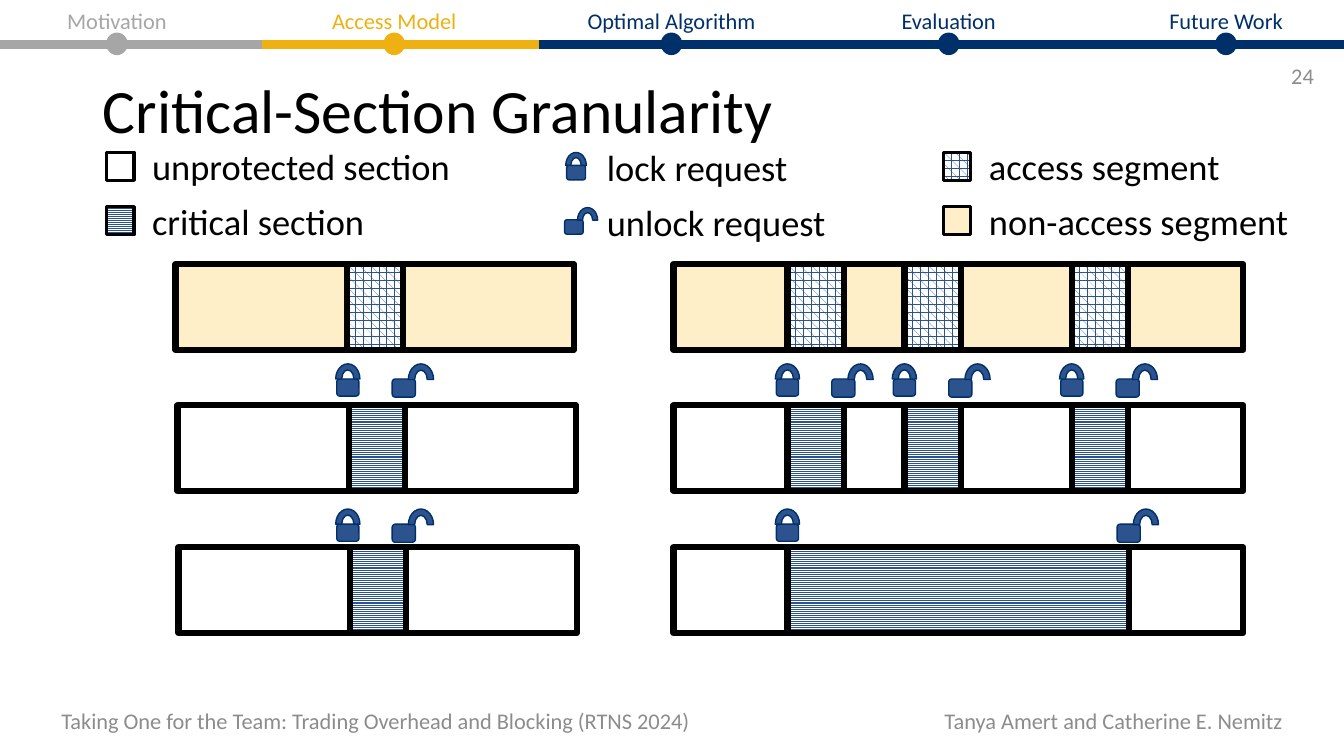
from dataclasses import dataclass

import pptx
import pptx.dml.color
import pptx.enum.dml
import pptx.enum.shapes
import pptx.enum.text
import pptx.oxml.ns
import pptx.util
from lxml import etree
from pptx.util import Inches

SHAPE = pptx.enum.shapes.MSO_SHAPE
PATTERN = pptx.enum.dml.MSO_PATTERN
ALIGN = pptx.enum.text.PP_ALIGN
ANCHOR = pptx.enum.text.MSO_ANCHOR

FONT = "Calibri"
BLACK, WHITE = "000000", "FFFFFF"
NAVY, BLUE, GOLD = "003069", "2D538F", "EEB111"
CREAM, GRAY, FOOTER_GRAY = "FFEFC8", "A6A6A6", "8C8C8C"


@dataclass(frozen=True)
class Box:
    left: float
    top: float
    width: float
    height: float

    def lengths(self) -> tuple:
        return tuple(Inches(v) for v in (self.left, self.top, self.width, self.height))


@dataclass(frozen=True)
class Fill:
    color: str | None = None
    pattern: object = None


@dataclass(frozen=True)
class Stage:
    label: str
    color: str
    label_width: float


@dataclass(frozen=True)
class Padlock:
    body_width: float
    body_height: float
    arc: Box  # relative to the body


@dataclass(frozen=True)
class LegendEntry:
    label: str
    left: float
    top: float
    width: float
    key: Fill | None = None


@dataclass(frozen=True)
class Segment:
    offset: float
    width: float = 0.56


@dataclass(frozen=True)
class Timeline:
    row_lefts: tuple[float, float, float]
    request_left: float
    width: float
    accesses: tuple[Segment, ...]
    coarse_section: Segment


UNPROTECTED = Fill()
CRITICAL = Fill(BLUE, PATTERN.LIGHT_HORIZONTAL)
ACCESS = Fill(BLUE, PATTERN.PLAID)
NON_ACCESS = Fill(CREAM)

LOCK = Padlock(0.22, 0.17, Box(-0.01, -0.15, 0.24, 0.3))
UNLOCK = Padlock(0.23, 0.18, Box(0.16, -0.15, 0.25, 0.31))

STAGES = [
    Stage("Motivation", GRAY, 1.48),
    Stage("Access Model", GOLD, 2.09),
    Stage("Optimal Algorithm", NAVY, 2.13),
    Stage("Evaluation", NAVY, 1.86),
    Stage("Future Work", NAVY, 1.48),
]
FIRST_STAGE, STAGE_STEP, TRACK_Y = 1.16, 2.75, 0.44
TRACK = [(0, 2.6, GRAY), (2.6, 5.35, GOLD), (5.35, 13.33, NAVY)]

LEGEND = [
    LegendEntry("unprotected section", 1.41, 1.38, 3.72, UNPROTECTED),
    LegendEntry("critical section", 1.41, 1.92, 2.89, CRITICAL),
    LegendEntry("lock request", 5.92, 1.39, 2.59),
    LegendEntry("unlock request", 5.92, 1.93, 2.71),
    LegendEntry("access segment", 9.71, 1.38, 2.94, ACCESS),
    LegendEntry("non-access segment", 9.71, 1.92, 3.48, NON_ACCESS),
]

ROW_TOPS = (2.62, 4.02, 5.43)
REQUEST_TOPS = (3.76, 5.2)
BAR_HEIGHT = 0.85
TIMELINES = [
    Timeline((1.74, 1.76, 1.77), 1.75, 3.95, (Segment(1.7),), Segment(1.7)),
    Timeline((6.68, 6.68, 6.68), 6.68, 5.65,
             (Segment(1.13), Segment(2.29), Segment(3.95)), Segment(1.13, 3.39)),
]


def rgb(color: str) -> pptx.dml.color.RGBColor:
    return pptx.dml.color.RGBColor.from_string(color)


def style_text(frame, text: str, size: float, color: str, align) -> None:
    frame.text = text
    frame.word_wrap = True
    paragraph = frame.paragraphs[0]
    paragraph.alignment = align
    font = paragraph.runs[0].font
    font.name, font.size = FONT, pptx.util.Pt(size)
    font.color.rgb = rgb(color)


def add_text(slide, box: Box, text: str, size: float, color: str,
             align=ALIGN.LEFT, anchor=ANCHOR.MIDDLE) -> None:
    frame = slide.shapes.add_textbox(*box.lengths()).text_frame
    frame.vertical_anchor = anchor
    style_text(frame, text, size, color, align)


def draw_shape(slide, kind, box: Box, fill: Fill, line: str, weight: float) -> None:
    shape = slide.shapes.add_shape(kind, *box.lengths())
    shape.shadow.inherit = False
    if fill.pattern is not None:
        shape.fill.patterned()
        shape.fill.pattern = fill.pattern
        shape.fill.fore_color.rgb = rgb(fill.color)
        shape.fill.back_color.rgb = rgb(WHITE)
    elif fill.color:
        shape.fill.solid()
        shape.fill.fore_color.rgb = rgb(fill.color)
    else:
        shape.fill.background()
    shape.line.color.rgb = rgb(line)
    shape.line.width = pptx.util.Pt(weight)


def draw_padlock(slide, padlock: Padlock, left: float, top: float, scale: float = 1) -> None:
    arc = padlock.arc
    body = Box(left, top, padlock.body_width * scale, padlock.body_height * scale)
    shackle = Box(left + arc.left * scale, top + arc.top * scale,
                  arc.width * scale, arc.height * scale)
    draw_shape(slide, SHAPE.ROUNDED_RECTANGLE, body, Fill(BLUE), NAVY, 1)
    draw_shape(slide, SHAPE.BLOCK_ARC, shackle, Fill(BLUE), NAVY, 1)


def draw_progress(slide) -> None:
    for start, end, color in TRACK:
        track = slide.shapes.add_connector(
            pptx.enum.shapes.MSO_CONNECTOR.STRAIGHT,
            Inches(start), Inches(TRACK_Y), Inches(end), Inches(TRACK_Y))
        track.line.color.rgb = rgb(color)
        track.line.width = pptx.util.Pt(6)
        etree.SubElement(track._element.spPr, pptx.oxml.ns.qn("a:effectLst"))
    for index, stage in enumerate(STAGES):
        center = FIRST_STAGE + index * STAGE_STEP
        label = Box(center - stage.label_width / 2, 0.02, stage.label_width, 0.37)
        add_text(slide, label, stage.label, 16, stage.color, ALIGN.CENTER, ANCHOR.TOP)
        draw_shape(slide, SHAPE.OVAL, Box(center - 0.1, 0.33, 0.2, 0.21),
                   Fill(stage.color), stage.color, 1)


def draw_legend(slide) -> None:
    for entry in LEGEND:
        add_text(slide, Box(entry.left, entry.top, entry.width, 0.54), entry.label, 26, BLACK)
        if entry.key:
            key = Box(entry.left - 0.35, entry.top + 0.13, 0.27, 0.28)
            draw_shape(slide, SHAPE.RECTANGLE, key, entry.key, BLACK, 2.25)
    draw_padlock(slide, LOCK, 5.62, 1.64, 0.85)
    draw_padlock(slide, UNLOCK, 5.6, 2.18, 0.8)


def draw_timeline(slide, timeline: Timeline) -> None:
    coarse = (timeline.coarse_section,)
    rows = [(NON_ACCESS, ACCESS, timeline.accesses),
            (UNPROTECTED, CRITICAL, timeline.accesses),
            (UNPROTECTED, CRITICAL, coarse)]
    for left, top, (base, marked, segments) in zip(timeline.row_lefts, ROW_TOPS, rows):
        spans = [(Segment(0, timeline.width), base)] + [(s, marked) for s in segments]
        for span, fill in spans:
            box = Box(left + span.offset, top, span.width, BAR_HEIGHT)
            draw_shape(slide, SHAPE.RECTANGLE, box, fill, BLACK, 4.5)
    for top, segments in zip(REQUEST_TOPS, (timeline.accesses, coarse)):
        for segment in segments:
            start = timeline.request_left + segment.offset
            draw_padlock(slide, LOCK, start - 0.11, top)
            draw_padlock(slide, UNLOCK, start + segment.width - 0.12, top)


def main() -> None:
    deck = pptx.Presentation()
    deck.slide_width, deck.slide_height = Inches(13.33), Inches(7.5)
    slide = deck.slides.add_slide(deck.slide_layouts[5])

    # Title
    title = slide.shapes.title
    title.left, title.top, title.width, title.height = Box(0.92, 0.4, 11.5, 1.45).lengths()
    title.text_frame.vertical_anchor = ANCHOR.MIDDLE
    style_text(title.text_frame, "Critical-Section Granularity", 44, BLACK, ALIGN.LEFT)
    title.text_frame.paragraphs[0].line_spacing = 0.9

    # Footer and page number
    add_text(slide, Box(0.51, 6.95, 6.6, 0.4),
             "Taking One for the Team: Trading Overhead and Blocking (RTNS 2024)", 16, FOOTER_GRAY)
    add_text(slide, Box(9.03, 6.95, 3.79, 0.4),
             "Tanya Amert and Catherine E. Nemitz", 16, FOOTER_GRAY, ALIGN.RIGHT)
    add_text(slide, Box(10.13, 0.55, 3, 0.4), "24", 16, FOOTER_GRAY, ALIGN.RIGHT)

    # Legend, timelines and progress track
    draw_legend(slide)
    for timeline in TIMELINES:
        draw_timeline(slide, timeline)
    draw_progress(slide)
    deck.save("out.pptx")


if __name__ == "__main__":
    main()
